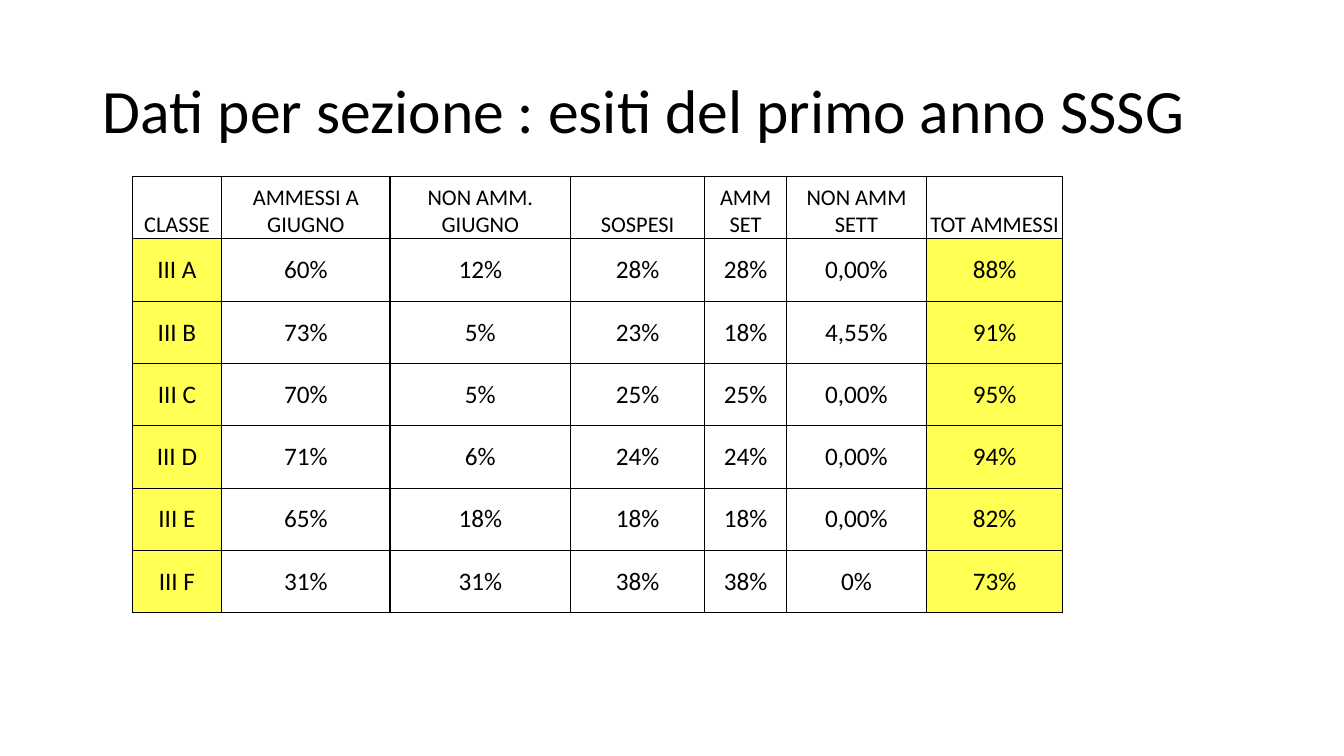
from lxml.etree import SubElement
from pptx import Presentation
from pptx.dml.color import RGBColor
from pptx.enum.text import MSO_ANCHOR, PP_ALIGN
from pptx.oxml.ns import qn
from pptx.util import Cm, Pt

FONT = "Calibri"
BLACK, WHITE, YELLOW = "000000", "FFFFFF", "FFFF00"
FILL_OPACITY = 67

COLUMN_WIDTHS = [2.26, 4.24, 4.55, 3.38, 2.06, 3.53, 3.43]
ROW_HEIGHT = 1.57
RESULTS = [
    ["CLASSE", "AMMESSI A GIUGNO", "NON AMM. GIUGNO", "SOSPESI",
     "AMM SET", "NON AMM SETT", "TOT AMMESSI"],
    ["III A", "60%", "12%", "28%", "28%", "0,00%", "88%"],
    ["III B", "73%", "5%", "23%", "18%", "4,55%", "91%"],
    ["III C", "70%", "5%", "25%", "25%", "0,00%", "95%"],
    ["III D", "71%", "6%", "24%", "24%", "0,00%", "94%"],
    ["III E", "65%", "18%", "18%", "18%", "0,00%", "82%"],
    ["III F", "31%", "31%", "38%", "38%", "0%", "73%"],
]


def color(hex_value):
    return RGBColor.from_string(hex_value)


def format_paragraph(paragraph, size, alignment):
    paragraph.alignment = alignment
    for run in paragraph.runs:
        run.font.name = FONT
        run.font.size = Pt(size)
        run.font.color.rgb = color(BLACK)


def add_title(slide, text):
    shape = slide.shapes.add_textbox(Cm(2.34), Cm(1.02), Cm(29.21), Cm(3.68))
    text_frame = shape.text_frame
    text_frame.word_wrap = True
    text_frame.vertical_anchor = MSO_ANCHOR.MIDDLE
    text_frame.text = text
    paragraph = text_frame.paragraphs[0]
    paragraph.line_spacing = 0.9
    format_paragraph(paragraph, 44, PP_ALIGN.LEFT)


def set_borders(cell):
    properties = cell._tc.get_or_add_tcPr()
    for side in ("a:lnL", "a:lnR", "a:lnT", "a:lnB"):
        line = SubElement(properties, qn(side), w=str(Pt(1)))
        fill = SubElement(line, qn("a:solidFill"))
        SubElement(fill, qn("a:srgbClr"), val=BLACK)


def set_fill(cell, hex_value):
    cell.fill.solid()
    cell.fill.fore_color.rgb = color(hex_value)
    fill_color = cell._tc.tcPr.find(qn("a:solidFill")).find(qn("a:srgbClr"))
    SubElement(fill_color, qn("a:alpha"), val=str(FILL_OPACITY * 1000))


def format_cell(cell, text, size, anchor, fill):
    cell.text_frame.text = text
    cell.margin_left = cell.margin_right = Cm(0)
    cell.margin_top = cell.margin_bottom = Cm(0)
    cell.vertical_anchor = anchor
    format_paragraph(cell.text_frame.paragraphs[0], size, PP_ALIGN.CENTER)
    # Borders come before the fill in the cell properties
    set_borders(cell)
    set_fill(cell, fill)


def add_results_table(slide, rows):
    table = slide.shapes.add_table(
        len(rows), len(COLUMN_WIDTHS), Cm(3.33), Cm(4.45),
        Cm(sum(COLUMN_WIDTHS)), Cm(ROW_HEIGHT * len(rows))).table
    table.horz_banding = False
    table.first_row = False
    for column, width in zip(table.columns, COLUMN_WIDTHS):
        column.width = Cm(width)

    last_column = len(COLUMN_WIDTHS) - 1
    for row_index, values in enumerate(rows):
        table.rows[row_index].height = Cm(ROW_HEIGHT)
        is_header = row_index == 0
        size = 16 if is_header else 18
        anchor = MSO_ANCHOR.BOTTOM if is_header else MSO_ANCHOR.MIDDLE
        for column_index, text in enumerate(values):
            # Class names and totals stand out below the header
            highlighted = not is_header and column_index in (0, last_column)
            format_cell(table.cell(row_index, column_index), text, size,
                        anchor, YELLOW if highlighted else WHITE)


def main():
    presentation = Presentation()
    presentation.slide_width = Cm(33.87)
    presentation.slide_height = Cm(19.05)
    slide = presentation.slides.add_slide(presentation.slide_layouts[6])

    add_title(slide, "Dati per sezione : esiti del primo anno SSSG")
    add_results_table(slide, RESULTS)

    presentation.save("out.pptx")


if __name__ == "__main__":
    main()
